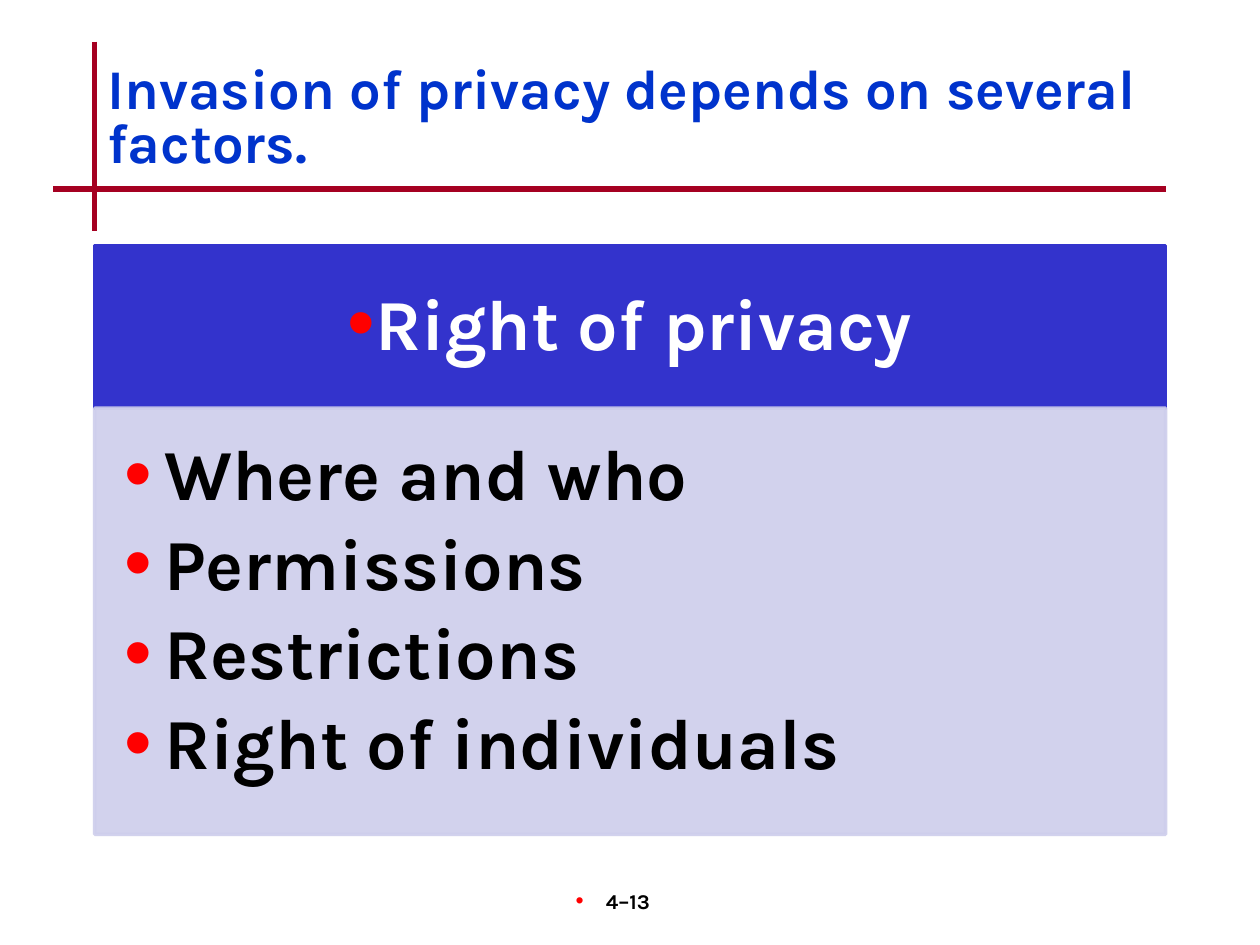
from lxml import etree
from pptx import Presentation
from pptx.dml.color import RGBColor
from pptx.enum.shapes import MSO_CONNECTOR, MSO_SHAPE
from pptx.enum.text import MSO_ANCHOR, PP_ALIGN
from pptx.oxml.ns import qn
from pptx.util import Cm, Pt

LEFT, CENTER = PP_ALIGN.LEFT, PP_ALIGN.CENTER
TOP, MIDDLE = MSO_ANCHOR.TOP, MSO_ANCHOR.MIDDLE
STRAIGHT = MSO_CONNECTOR.STRAIGHT
RECT = MSO_SHAPE.RECTANGLE
FONT = "Karla"
COLORS = {
    "rule": "A50021",
    "title": "0033CC",
    "header": "3333CC",
    "body": "CECEEC",
    "bullet": "FF0000",
    "white": "FFFFFF",
    "black": "000000",
}


def rgb(name):
    return RGBColor.from_string(COLORS[name])


def add_run(p, text, size, color):
    r = p.add_run()
    r.text = text
    r.font.name = FONT
    r.font.size = Pt(size)
    r.font.bold = True
    r.font.color.rgb = rgb(color)


def set_bullet(p, indent):
    pPr = p._p.get_or_add_pPr()
    pPr.set("marL", str(Cm(indent)))
    pPr.set("indent", str(-Cm(indent)))
    clr = etree.SubElement(pPr, qn("a:buClr"))
    etree.SubElement(clr, qn("a:srgbClr"), val=COLORS["bullet"])
    etree.SubElement(pPr, qn("a:buSzPct"), val="110000")
    etree.SubElement(pPr, qn("a:buFont"), typeface="Arial")
    etree.SubElement(pPr, qn("a:buChar"), char="•")


def set_frame(tf, insets, anchor):
    tf.word_wrap = True
    tf.vertical_anchor = anchor
    tf.margin_left, tf.margin_top, tf.margin_right, tf.margin_bottom = map(Cm, insets)


def set_alpha(sp, percent):
    for clr in sp._element.spPr.iter(qn("a:srgbClr")):
        etree.SubElement(clr, qn("a:alpha"), val=str(percent * 1000))


def add_rule(s, x1, y1, x2, y2):
    line = s.shapes.add_connector(STRAIGHT, Cm(x1), Cm(y1), Cm(x2), Cm(y2))
    line.line.color.rgb = rgb("rule")
    line.line.width = Pt(3)
    etree.SubElement(line._element.spPr, qn("a:effectLst"))


def add_title(s, x, y, w, h, text):
    add_rule(s, x, y, x, y + 3.81)
    add_rule(s, x - 0.84, y + 2.97, x + w, y + 2.97)
    sp = s.shapes.title
    sp.left, sp.top, sp.width, sp.height = Cm(x), Cm(y), Cm(w), Cm(h)
    tf = sp.text_frame
    set_frame(tf, (0.25, 0.13, 0.25, 0.13), MIDDLE)
    p = tf.paragraphs[0]
    p.alignment = LEFT
    p.line_spacing = 0.8
    add_run(p, text, 32, "title")


def add_panel(s, x, y, w, h, fill, items, color, align, anchor, insets, indent):
    sp = s.shapes.add_shape(RECT, Cm(x), Cm(y), Cm(w), Cm(h))
    sp.shadow.inherit = False
    sp.fill.solid()
    sp.fill.fore_color.rgb = rgb(fill)
    sp.line.color.rgb = rgb(fill)
    sp.line.width = Pt(2)
    tf = sp.text_frame
    set_frame(tf, insets, anchor)
    for i, item in enumerate(items):
        p = tf.paragraphs[0] if i == 0 else tf.add_paragraph()
        set_bullet(p, indent)
        p.alignment = align
        p.line_spacing = 0.9
        p.space_after = Pt(7)
        add_run(p, item, 41, color)
    return sp


def add_privacy_list(s, x, y, w, h, heading, items):
    head_h = 3.28
    add_panel(s, x, y, w, head_h, "header", [heading], "white",
              CENTER, MIDDLE, (0.81, 0.46, 0.81, 0.46), 0)
    body = add_panel(s, x, y + head_h, w, h - head_h, "body", items, "black",
                     LEFT, TOP, (0.61, 0.61, 0.81, 0.91), 0.79)
    set_alpha(body, 90)


def add_page_number(s, x, y, w, h, text):
    tf = s.shapes.add_textbox(Cm(x), Cm(y), Cm(w), Cm(h)).text_frame
    set_frame(tf, (0.25, 0.13, 0.74, 0.13), TOP)
    p = tf.paragraphs[0]
    set_bullet(p, 0.61)
    p.alignment = CENTER
    add_run(p, text, 12, "black")


def main():
    prs = Presentation()
    prs.slide_width, prs.slide_height = Cm(25.4), Cm(19.05)
    s = prs.slides.add_slide(prs.slide_layouts[5])
    s.background.fill.solid()
    s.background.fill.fore_color.rgb = rgb("white")
    x, w = 1.91, 21.59
    add_title(s, x, 0.84, w, 3.18, "Invasion of privacy depends on several factors.")
    add_privacy_list(s, x, 4.95, w, 11.87, "Right of privacy",
                     ["Where and who", "Permissions", "Restrictions", "Right of individuals"])
    add_page_number(s, 9.96, 17.78, 5.28, 1.27, "4–13")
    prs.save("out.pptx")


if __name__ == "__main__":
    main()
